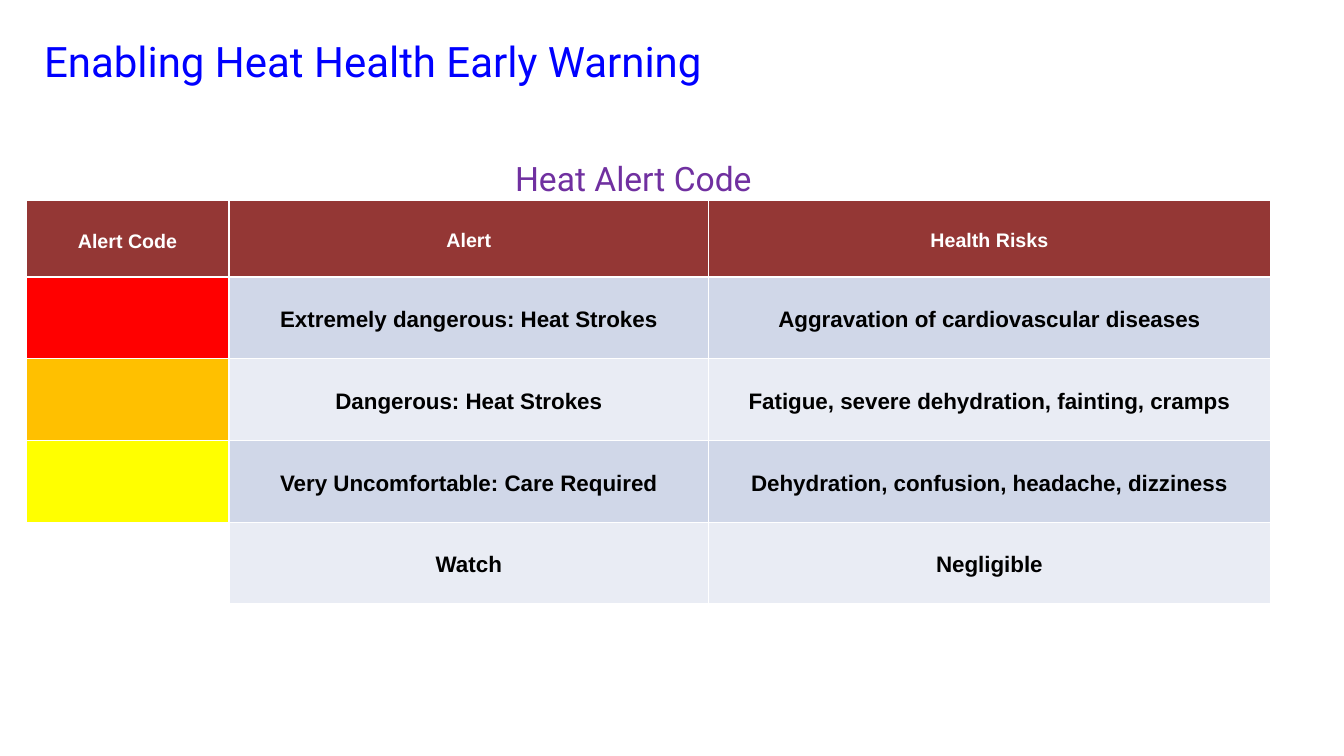
from lxml import etree
from pptx import Presentation
from pptx import util as u
from pptx.dml import color
from pptx.enum import text
from pptx.oxml import ns

HUES = {
    "title": "0000FF", "label": "7030A0", "head": "943735",
    "red": "FF0000", "amber": "FFC000", "yellow": "FFFF00",
    "white": "FFFFFF", "black": "000000", "dark": "D0D7E8", "light": "E9ECF4",
}
ALERTS = [
    ("head", "head", "Alert Code", "Alert", "Health Risks"),
    ("red", "dark", "", "Extremely dangerous: Heat Strokes",
     "Aggravation of cardiovascular diseases"),
    ("amber", "light", "", "Dangerous: Heat Strokes",
     "Fatigue, severe dehydration, fainting, cramps"),
    ("yellow", "dark", "", "Very Uncomfortable: Care Required",
     "Dehydration, confusion, headache, dizziness"),
    ("white", "light", "", "Watch", "Negligible"),
]


def write(frame, words, size, hue, font="Roboto", bold=False,
          align=text.PP_ALIGN.LEFT, space=None):
    para = frame.paragraphs[0]
    para.alignment = align
    para.line_spacing = space
    run = para.add_run()
    run.text = words
    run.font.size = u.Pt(size)
    run.font.name = font
    run.font.bold = bold
    run.font.color.rgb = color.RGBColor.from_string(HUES[hue])


def edge(cell, hue, width):
    """Draw a line on all four sides of a table cell."""
    props = cell._tc.get_or_add_tcPr()
    for spot, side in enumerate(("lnL", "lnR", "lnT", "lnB")):
        line = etree.Element(ns.qn("a:" + side), w=str(u.Pt(width)))
        fill = etree.SubElement(line, ns.qn("a:solidFill"))
        etree.SubElement(fill, ns.qn("a:srgbClr"), val=HUES[hue])
        props.insert(spot, line)


deck = Presentation()
deck.slide_width, deck.slide_height = u.Cm(33.87), u.Cm(19.05)
slide = deck.slides.add_slide(deck.slide_layouts[5])

# Alert table
widths = [5.11, 12.09, 14.15]
heights = [1.93] + [2.06] * 4
grid = slide.shapes.add_table(
    len(heights), len(widths), u.Cm(0.66), u.Cm(5.05),
    u.Cm(sum(widths)), u.Cm(sum(heights))).table
for col, width in zip(grid.columns, widths):
    col.width = u.Cm(width)
for r, (code, band, *words) in enumerate(ALERTS):
    grid.rows[r].height = u.Cm(heights[r])
    for c, word in enumerate(words):
        cell = grid.cell(r, c)
        cell.fill.solid()
        cell.fill.fore_color.rgb = color.RGBColor.from_string(
            HUES[band if c else code])
        edge(cell, "white", 1)
        cell.vertical_anchor = text.MSO_ANCHOR.MIDDLE
        cell.margin_left = cell.margin_right = cell.margin_bottom = 0
        cell.margin_top = u.Cm(0.1)
        if word:
            write(cell.text_frame, word, 16 if r else 14,
                  "black" if r else "white", font="Arial", bold=True,
                  align=text.PP_ALIGN.CENTER, space=None if r or c else 1.07)

# Table label and slide title
label = slide.shapes.add_textbox(u.Cm(12.65), u.Cm(3.51), u.Cm(6.91), u.Cm(1.96))
title = slide.shapes.title
title.left, title.top = u.Cm(0.86), u.Cm(0.64)
title.width, title.height = u.Cm(31.29), u.Cm(1.68)
for box, words, size, hue, pad, anchor in (
        (label, "Heat Alert Code", 24, "label", 0.33, text.MSO_ANCHOR.MIDDLE),
        (title, "Enabling Heat Health Early Warning", 30, "title", 0.25,
         text.MSO_ANCHOR.TOP)):
    frame = box.text_frame
    frame.word_wrap = True
    frame.auto_size = text.MSO_AUTO_SIZE.NONE
    frame.vertical_anchor = anchor
    frame.margin_left = frame.margin_right = u.Cm(pad)
    frame.margin_top = frame.margin_bottom = u.Cm(pad)
    write(frame, words, size, hue)

deck.save("out.pptx")
